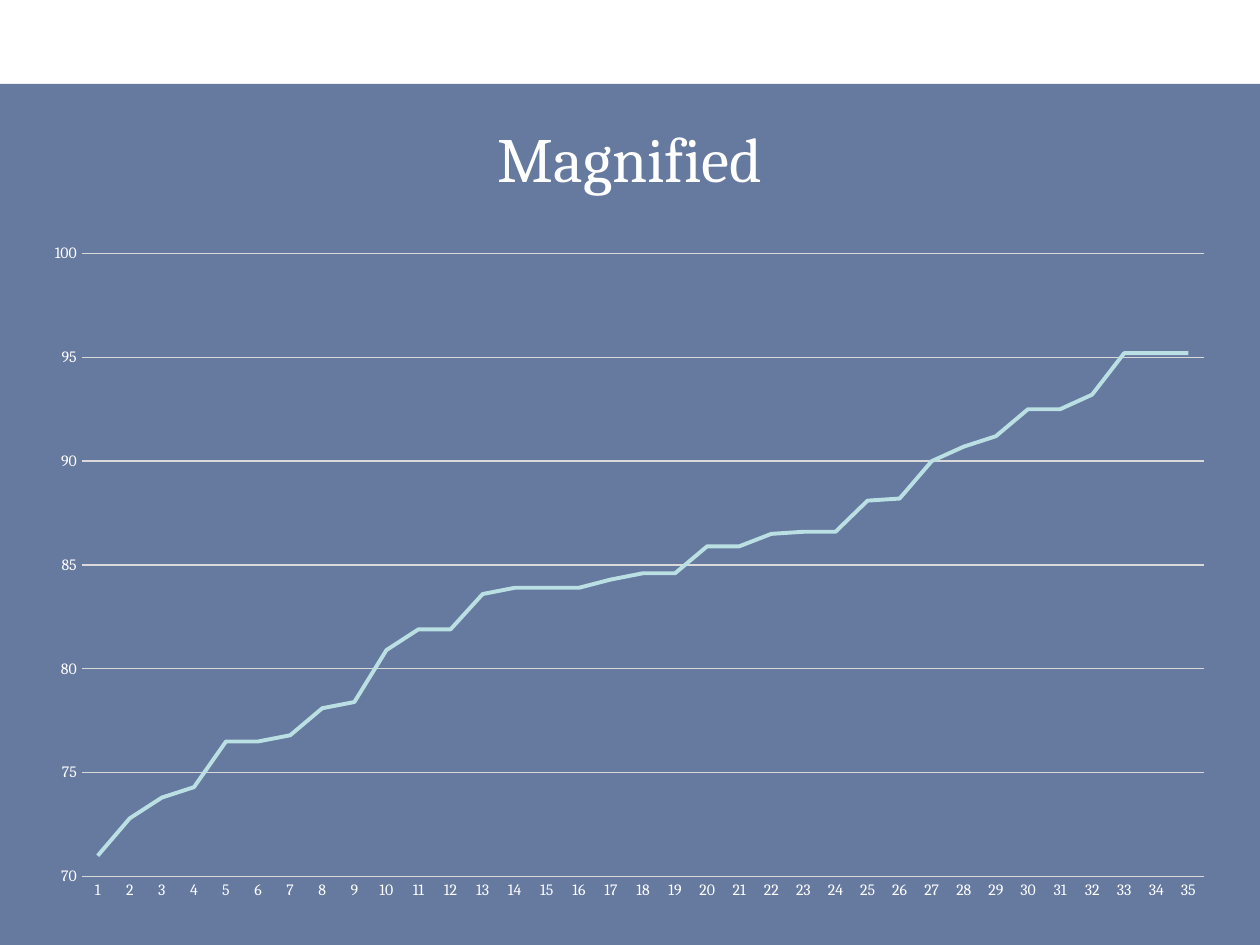
"""Build the Magnified slide: a title and a line chart on a tinted band."""
from dataclasses import dataclass

from lxml import etree
from pptx import Presentation, util as u
from pptx.chart.data import CategoryChartData
from pptx.dml.color import RGBColor
from pptx.enum import chart as ch, shapes, text
from pptx.oxml import ns, parse_xml

WIDE, HIGH = u.Inches(10), u.Inches(7.5)
COLS, ROWS = 120, 90
FONT = "Cambria"
HUES = {"band": "002060", "text": "FFFFFF", "grid": "D9D9D9", "line": "BBE0E3"}
VALUES = [
    71, 72.8, 73.8, 74.3, 76.5, 76.5, 76.8, 78.1, 78.4, 80.9, 81.9, 81.9,
    83.6, 83.9, 83.9, 83.9, 84.3, 84.6, 84.6, 85.9, 85.9, 86.5, 86.6, 86.6,
    88.1, 88.2, 90, 90.7, 91.2, 92.5, 92.5, 93.2, 95.2, 95.2, 95.2,
]
PLOT = {"x": 0.042, "y": 0.033, "w": 0.938, "h": 0.913}


@dataclass(frozen=True)
class Area:
    col: int
    row: int
    cols: int
    rows: int

    def box(self) -> tuple[int, int, int, int]:
        return (WIDE * self.col // COLS, HIGH * self.row // ROWS,
                WIDE * self.cols // COLS, HIGH * self.rows // ROWS)


BAND = Area(0, 8, 120, 82)
TITLE = Area(3, 10, 114, 10)
CHART = Area(3, 22, 114, 65)


def hue(name: str) -> RGBColor:
    return RGBColor.from_string(HUES[name])


def style(font, size: float) -> None:
    font.name, font.size, font.bold = FONT, u.Pt(size), False
    font.color.rgb = hue("text")


def rule(line, name: str, width: float) -> None:
    line.color.rgb, line.width = hue(name), u.Pt(width)


def add_band(slide, area: Area):
    band = slide.shapes.add_shape(shapes.MSO_SHAPE.RECTANGLE, *area.box())
    band.shadow.inherit = False
    band.fill.solid()
    band.fill.fore_color.rgb = hue("band")
    band.line.fill.background()
    tint = band._element.spPr.find(".//" + ns.qn("a:srgbClr"))
    etree.SubElement(tint, ns.qn("a:alpha"), val="60000")
    return band


def set_title(slide, area: Area, words: str):
    title = slide.shapes.title
    title.left, title.top, title.width, title.height = area.box()
    frame = title.text_frame
    frame.text = words
    frame.vertical_anchor = text.MSO_ANCHOR.MIDDLE
    para = frame.paragraphs[0]
    para.alignment = text.PP_ALIGN.CENTER
    style(para.runs[0].font, 36)
    return title


def fix_plot(chart) -> None:
    plot = chart._chartSpace.chart.plotArea
    for old in plot.findall(ns.qn("c:layout")):
        plot.remove(old)
    modes = '<c:xMode val="edge"/><c:yMode val="edge"/>'
    sizes = "".join(f'<c:{key} val="{val}"/>' for key, val in PLOT.items())
    plot.insert(0, parse_xml(
        f'<c:layout {ns.nsdecls("c")}><c:manualLayout>'
        f'<c:layoutTarget val="inner"/>{modes}{sizes}'
        '</c:manualLayout></c:layout>'))


def add_chart(slide, area: Area) -> None:
    data = CategoryChartData()
    data.categories = [str(num) for num in range(1, len(VALUES) + 1)]
    data.add_series("Series 1", VALUES)
    chart = slide.shapes.add_chart(
        ch.XL_CHART_TYPE.LINE, *area.box(), data).chart
    chart.has_title = chart.has_legend = False
    style(chart.font, 10)
    for axis in (chart.category_axis, chart.value_axis):
        axis.major_tick_mark = axis.minor_tick_mark = ch.XL_TICK_MARK.NONE
        style(axis.tick_labels.font, 9)
    rule(chart.category_axis.format.line, "grid", 0.75)
    scale = chart.value_axis
    scale.minimum_scale, scale.maximum_scale, scale.major_unit = 70, 100, 5
    scale.format.line.fill.background()
    scale.has_major_gridlines = True
    rule(scale.major_gridlines.format.line, "grid", 0.75)
    plot = chart.plots[0]
    plot.vary_by_categories = False
    curve = plot.series[0]
    curve.smooth = False
    curve.marker.style = ch.XL_MARKER_STYLE.NONE
    rule(curve.format.line, "line", 2.25)
    fix_plot(chart)


def main() -> None:
    deck = Presentation()
    deck.slide_width, deck.slide_height = WIDE, HIGH
    slide = deck.slides.add_slide(deck.slide_layouts[5])
    band = add_band(slide, BAND)
    title = set_title(slide, TITLE, "Magnified")
    band._element.addnext(title._element)
    add_chart(slide, CHART)
    deck.save("out.pptx")


if __name__ == "__main__":
    main()
